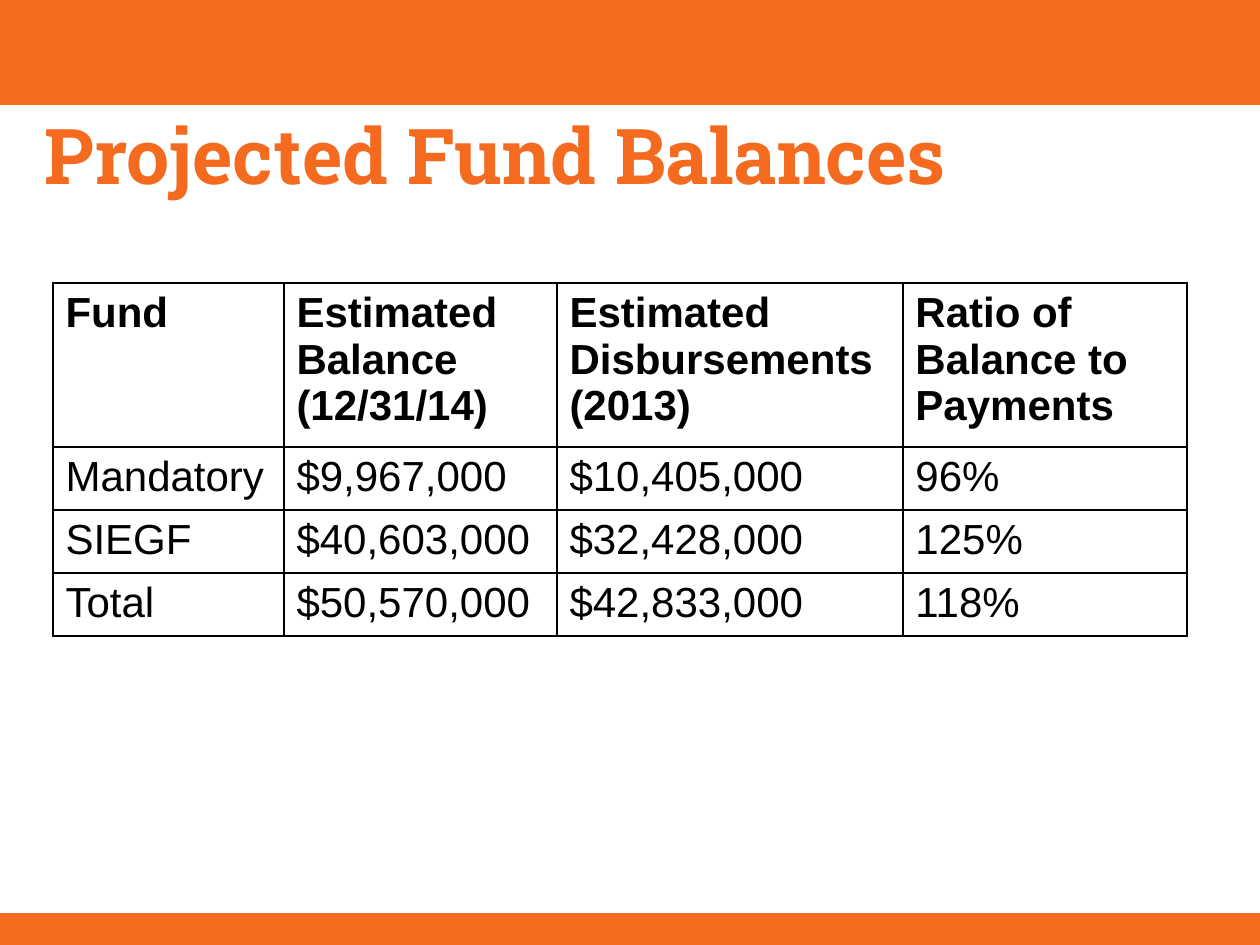
from pptx import Presentation
from pptx import util as u
from pptx.dml.color import RGBColor
from pptx.enum import shapes, text
from pptx.oxml import parse_xml
from pptx.oxml.ns import nsdecls

PX = 914400 // 126
ORANGE, BLACK = "F46A1F", "000000"
COLUMNS = [231, 273, 346, 284]
HEADER_HEIGHT, ROW_HEIGHT = 153, 59
ROWS = [
    ["Fund", "Estimated Balance (12/31/14)", "Estimated Disbursements (2013)",
     "Ratio of Balance to Payments"],
    ["Mandatory", "$9,967,000", "$10,405,000", "96%"],
    ["SIEGF", "$40,603,000", "$32,428,000", "125%"],
    ["Total", "$50,570,000", "$42,833,000", "118%"],
]


def px(*lengths):
    return [u.Emu(length * PX) for length in lengths]


def color(hex_string):
    return RGBColor.from_string(hex_string)


def add_span(para, words, font, size, hex_string, bold):
    span = para.add_run()
    span.text = words
    span.font.name = font
    span.font.size = u.Pt(size)
    span.font.bold = bold
    span.font.color.rgb = color(hex_string)


def add_band(page, left, top, width, height):
    band = page.shapes.add_shape(shapes.MSO_SHAPE.RECTANGLE,
                                 *px(left, top, width, height))
    band.shadow.inherit = False
    band.fill.solid()
    band.fill.fore_color.rgb = color(ORANGE)
    band.line.fill.background()


def add_title(page, left, top, width, height):
    box = page.shapes.add_textbox(*px(left, top, width, height))
    frame = box.text_frame
    frame.word_wrap = True
    frame.vertical_anchor = text.MSO_ANCHOR.MIDDLE
    para = frame.paragraphs[0]
    para.line_spacing = u.Pt(42)
    add_span(para, "Projected Fund Balances", "Roboto Slab", 44, ORANGE, True)


def add_borders(cell):
    properties = cell._tc.get_or_add_tcPr()
    for position, side in enumerate(("lnL", "lnR", "lnT", "lnB")):
        properties.insert(position, parse_xml(
            f'<a:{side} {nsdecls("a")} w="12700"><a:solidFill>'
            f'<a:srgbClr val="{BLACK}"/></a:solidFill></a:{side}>'))


def add_fund_table(page, left, top):
    heights = [HEADER_HEIGHT] + [ROW_HEIGHT] * (len(ROWS) - 1)
    table = page.shapes.add_table(
        len(ROWS), len(COLUMNS),
        *px(left, top, sum(COLUMNS), sum(heights))).table
    table.horz_banding = False
    for column, width in zip(table.columns, COLUMNS):
        column.width = px(width)[0]
    for index, (row, height, values) in enumerate(zip(table.rows, heights, ROWS)):
        row.height = px(height)[0]
        for cell, value in zip(row.cells, values):
            cell.fill.background()
            add_borders(cell)
            add_span(cell.text_frame.paragraphs[0], value, "Arial", 24, BLACK,
                     index == 0)


def main():
    deck = Presentation()
    deck.slide_width, deck.slide_height = px(1260, 945)
    page = deck.slides.add_slide(deck.slide_layouts[6])
    add_band(page, 0, 0, 1260, 105)
    add_band(page, 0, 913, 1260, 32)
    add_title(page, 32, 116, 1134, 94)
    add_fund_table(page, 53, 283)
    deck.save("out.pptx")


if __name__ == "__main__":
    main()
